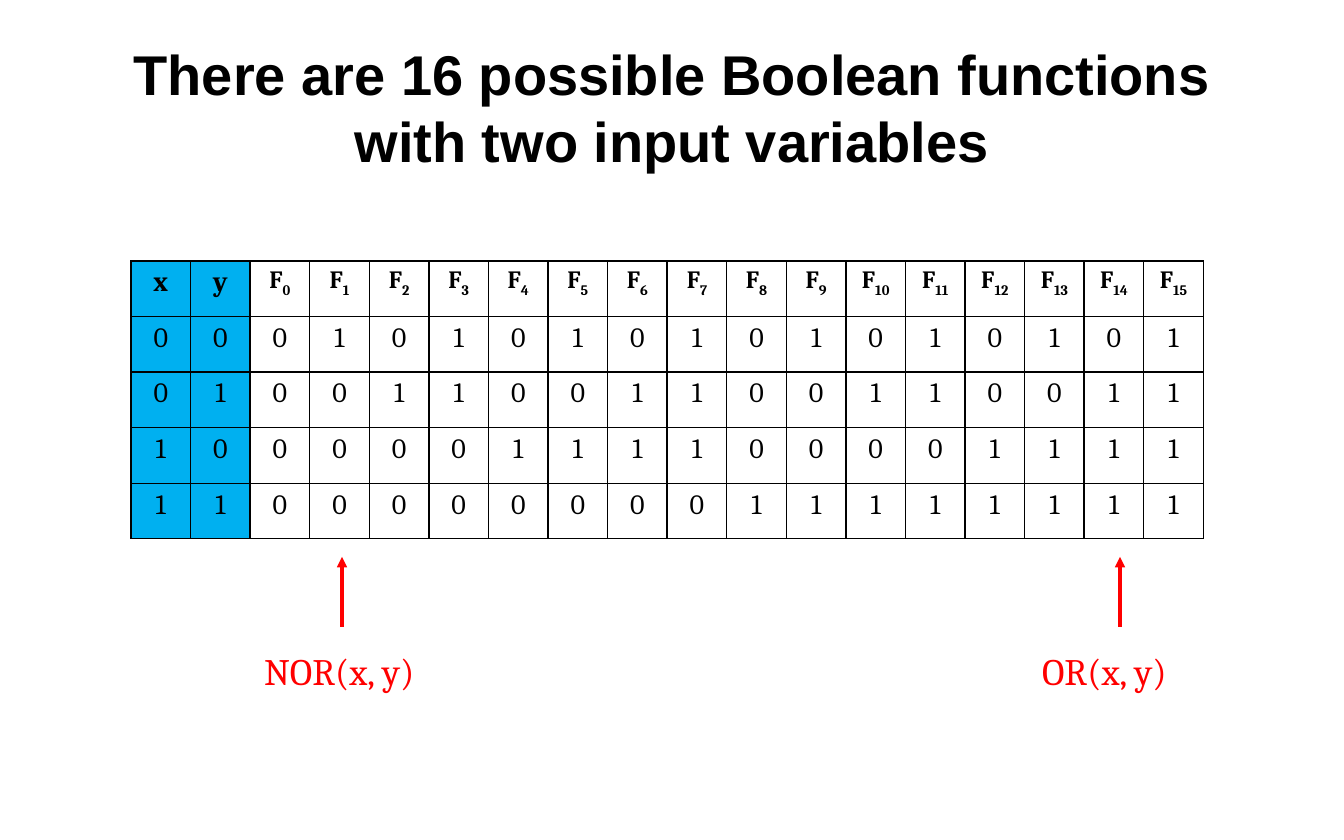
from lxml.etree import SubElement
from pptx import Presentation
from pptx.dml.color import RGBColor
from pptx.enum.shapes import MSO_CONNECTOR
from pptx.enum.text import MSO_ANCHOR, MSO_AUTO_SIZE, PP_ALIGN
from pptx.oxml.ns import qn
from pptx.util import Pt

PX = 914400 / 112
BLACK = RGBColor(0x00, 0x00, 0x00)
BLUE = RGBColor(0x00, 0xB0, 0xF0)
RED = RGBColor(0xFF, 0x00, 0x00)


def px(*nums):
    return [round(n * PX) for n in nums]


def write(frame, text, sub="", font="Cambria", size=18, bold=False,
          color=BLACK, align=PP_ALIGN.CENTER):
    """Fill a frame with text, and an optional subscript after it."""
    para = frame.paragraphs[0]
    para.alignment = align
    runs = []
    for i, line in enumerate(text.split("\n")):
        if i:
            para.add_line_break()
        runs.append(para.add_run())
        runs[-1].text = line
    if sub:
        runs.append(para.add_run())
        runs[-1].text = sub
        runs[-1].font._element.set("baseline", "-25000")
    for run in runs:
        run.font.name = font
        run.font.size = Pt(size)
        run.font.bold = bold
        run.font.color.rgb = color


def add_title(slide, box, text):
    title = slide.shapes.title
    title.left, title.top, title.width, title.height = px(*box)
    title.text_frame.vertical_anchor = MSO_ANCHOR.MIDDLE
    title.text_frame.auto_size = MSO_AUTO_SIZE.NONE
    write(title.text_frame, text, font="Arial", size=36, bold=True)


def add_edges(cell):
    props = cell._tc.get_or_add_tcPr()
    for side in ("lnL", "lnR", "lnT", "lnB"):
        edge = SubElement(props, qn(f"a:{side}"), w=str(Pt(1)))
        fill = SubElement(edge, qn("a:solidFill"))
        SubElement(fill, qn("a:srgbClr"), val=str(BLACK))


def add_truth(slide, box):
    """Truth table: inputs x and y, then every function F0 to F15."""
    rows, cols = 5, 18
    table = slide.shapes.add_table(rows, cols, *px(*box)).table
    table.first_row = table.horz_banding = False
    for col in table.columns:
        col.width = px(box[2] / cols)[0]
    for row in table.rows:
        row.height = px(box[3] / rows)[0]

    for r in range(rows):
        for c in range(cols):
            cell = table.cell(r, c)
            add_edges(cell)
            if c < 2:
                cell.fill.solid()
                cell.fill.fore_color.rgb = BLUE
            else:
                cell.fill.background()
            frame = cell.text_frame
            if r == 0 and c < 2:
                write(frame, "xy"[c], bold=True)
            elif r == 0:
                write(frame, "F", sub=str(c - 2), size=16, bold=True)
            else:
                # Inputs count up in binary; bit k of n is Fn on line k
                k = r - 1
                bit = k >> (1 - c) if c < 2 else (c - 2) >> k
                write(frame, str(bit & 1))


def add_note(slide, box, text):
    """Red label with an arrow up to its table column."""
    left, top, width, height = box
    # Arrow
    x = left + 89
    line = slide.shapes.add_connector(
        MSO_CONNECTOR.STRAIGHT, *px(x, top + 70, x, top))
    line.line.color.rgb = RED
    line.line.width = Pt(2.25)
    SubElement(line.line._get_or_add_ln(), qn("a:tailEnd"), type="triangle")
    SubElement(line._element.spPr, qn("a:effectLst"))
    # Label
    label = slide.shapes.add_textbox(*px(left, top + 86, width, height - 86))
    label.text_frame.word_wrap = False
    label.text_frame.auto_size = MSO_AUTO_SIZE.SHAPE_TO_FIT_TEXT
    write(label.text_frame, text, size=24, color=RED, align=PP_ALIGN.LEFT)


def main():
    deck = Presentation()
    deck.slide_width, deck.slide_height = px(1344, 840)
    slide = deck.slides.add_slide(deck.slide_layouts[5])
    add_title(slide, (112, 37, 1120, 140),
              "There are 16 possible Boolean functions\n"
              "with two input variables")
    add_truth(slide, (131, 261, 1073, 278))
    add_note(slide, (253, 557, 184, 143), "NOR(x, y)")
    add_note(slide, (1031, 557, 157, 143), "OR(x, y)")
    deck.save("out.pptx")


if __name__ == "__main__":
    main()
